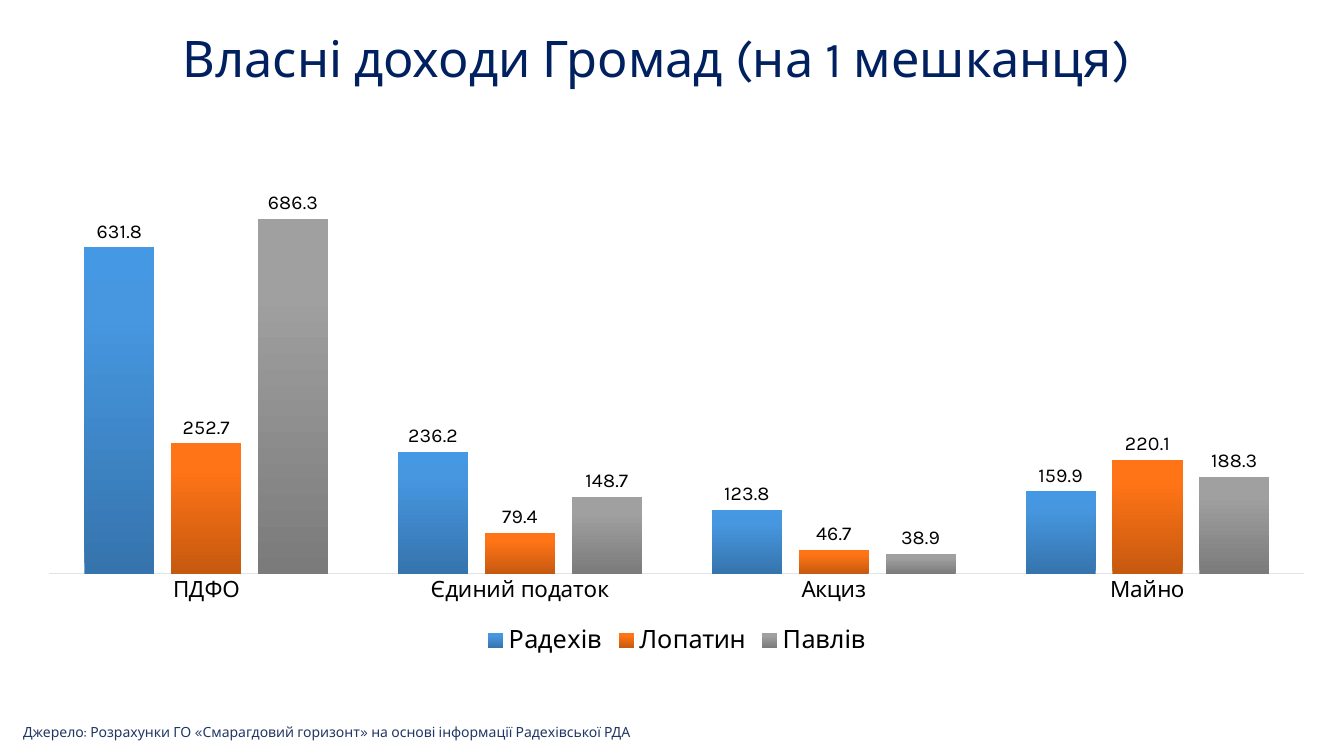
from copy import deepcopy

from pptx import Presentation
from pptx.chart.data import CategoryChartData
from pptx.dml.color import RGBColor
from pptx.enum.chart import (XL_CHART_TYPE, XL_LABEL_POSITION,
                             XL_LEGEND_POSITION, XL_TICK_MARK)
from pptx.enum.text import MSO_ANCHOR, PP_ALIGN
from pptx.util import Pt

COLUMNS = XL_CHART_TYPE.COLUMN_CLUSTERED
OUTSIDE = XL_LABEL_POSITION.OUTSIDE_END
BOTTOM = XL_LEGEND_POSITION.BOTTOM
NO_TICK = XL_TICK_MARK.NONE
MIDDLE = MSO_ANCHOR.MIDDLE
CENTER = PP_ALIGN.CENTER

FACE = "Karla"
FORMAT = "#,##0.0"
COLORS = {"title": "002060", "source": "203864", "text": "000000", "axis": "E0E5EB"}
STOPS = (0, 0.8, 1)

TAXES = ["ПДФО", "Єдиний податок", "Акциз", "Майно"]
TOWNS = [
    ("Радехів", (631.8, 236.2, 123.8, 159.9), ("3674AD", "4697E0", "4498E4")),
    ("Лопатин", (252.7, 79.4, 46.7, 220.1), ("C65910", "FF7416", "FF7517")),
    ("Павлів", (686.3, 148.7, 38.9, 188.3), ("7B7B7B", "A0A0A0", "A1A1A1")),
]


def style(font, size, color, face=FACE):
    font.name = face
    font.size = Pt(size)
    font.color.rgb = RGBColor.from_string(COLORS[color])


def add_text(text, box, size, color):
    """Add a one-paragraph text box and return its frame."""
    frame = slide.shapes.add_textbox(*map(Pt, box)).text_frame
    frame.word_wrap = True
    frame.text = text
    style(frame.paragraphs[0].runs[0].font, size, color)
    return frame


deck = Presentation()
deck.slide_width, deck.slide_height = Pt(960), Pt(540)
slide = deck.slides.add_slide(deck.slide_layouts[6])

# Title
title = add_text("Власні доходи Громад (на 1 мешканця)",
                 (26.6, 8.6, 885, 70.6), 36, "title")
title.vertical_anchor = MIDDLE
title.paragraphs[0].alignment = CENTER
title.paragraphs[0].line_spacing = 0.9

# Chart
data = CategoryChartData(number_format=FORMAT)
data.categories = TAXES
for name, values, _ in TOWNS:
    data.add_series(name, values)
box = map(Pt, (16.6, 107.3, 933.8, 364.3))
chart = slide.shapes.add_chart(COLUMNS, *box, data).chart
style(chart.font, 10, "text", "Calibri")
chart.has_title = False
chart.has_legend = True
chart.legend.position = BOTTOM
chart.legend.include_in_layout = False
style(chart.legend.font, 18, "text")

taxes = chart.category_axis
taxes.major_tick_mark = taxes.minor_tick_mark = NO_TICK
taxes.format.line.width = Pt(0.75)
taxes.format.line.color.rgb = RGBColor.from_string(COLORS["axis"])
style(taxes.tick_labels.font, 16, "text")

income = chart.value_axis
income.visible = False
income.has_major_gridlines = False
income.minimum_scale, income.maximum_scale = 0, 800

plot = chart.plots[0]
plot.vary_by_categories = False
plot.gap_width, plot.overlap = 100, -24

# Bars shade from dark at the foot to light at the top
for series, (_, _, shades) in zip(plot.series, TOWNS):
    fill = series.format.fill
    fill.gradient()
    fill.gradient_angle = 90
    stops = series._element.xpath(".//a:gsLst")[0]
    stops.append(deepcopy(stops[-1]))
    for stop, place, shade in zip(fill.gradient_stops, STOPS, shades):
        stop.position = place
        stop.color.rgb = RGBColor.from_string(shade)
    series.invert_if_negative = False
    labels = series.data_labels
    labels.show_value = True
    labels.position = OUTSIDE
    labels.number_format = FORMAT
    labels.number_format_is_linked = False
    style(labels.font, 14, "text")

# Source line, kept on one line
source = add_text("Джерело: Розрахунки ГО «Смарагдовий горизонт» на основі "
                  "інформації Радехівської РДА",
                  (9.4, 513.4, 480, 19.4), 10, "source")
source.word_wrap = False

deck.save("out.pptx")
